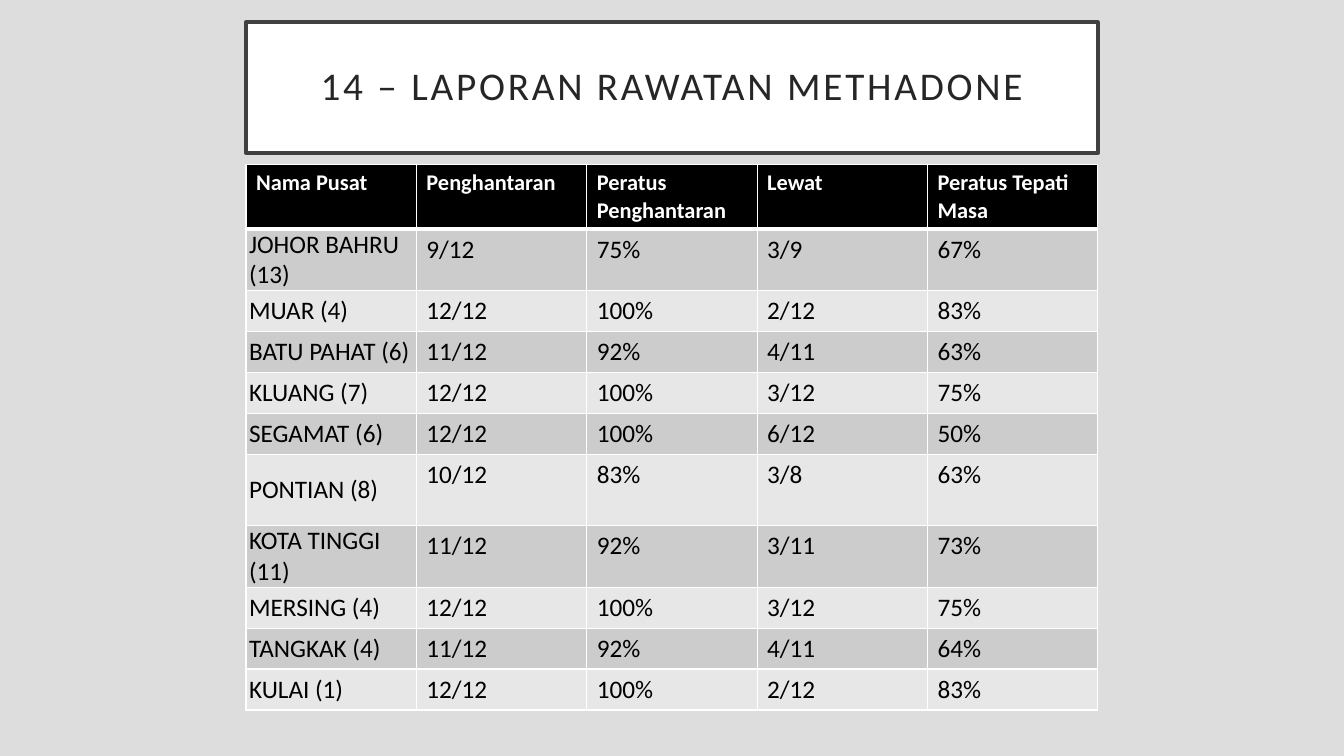
import pptx
import pptx.util
import pptx.dml.color
import pptx.enum.shapes
import pptx.enum.text
import pptx.oxml
import pptx.oxml.ns

Inches = pptx.util.Inches
Pt = pptx.util.Pt

COLOURS = {
    "page": "DDDDDD", "white": "FFFFFF", "frame": "404040", "title": "262626",
    "black": "000000", "odd": "CCCCCC", "even": "E7E7E7",
}
FONT = "Calibri"
TITLE_BOX = (2.44, 0.22, 8.45, 1.3)
TABLE_BOX = (2.44, 1.63, 8.45)
ROW_HEIGHT = 0.4
TALL_ROWS = {0: 0.64, 1: 0.61, 6: 0.71, 7: 0.61}

HEADINGS = ("Nama Pusat", "Penghantaran", "Peratus Penghantaran", "Lewat",
            "Peratus Tepati Masa")
CENTRES = (
    ("JOHOR BAHRU (13)", "9/12", "75%", "3/9", "67%"),
    ("MUAR (4)", "12/12", "100%", "2/12", "83%"),
    ("BATU PAHAT (6)", "11/12", "92%", "4/11", "63%"),
    ("KLUANG (7)", "12/12", "100%", "3/12", "75%"),
    ("SEGAMAT (6)", "12/12", "100%", "6/12", "50%"),
    ("PONTIAN (8)", "10/12", "83%", "3/8", "63%"),
    ("KOTA TINGGI (11)", "11/12", "92%", "3/11", "73%"),
    ("MERSING (4)", "12/12", "100%", "3/12", "75%"),
    ("TANGKAK (4)", "11/12", "92%", "4/11", "64%"),
    ("KULAI (1)", "12/12", "100%", "2/12", "83%"),
)


def colour(name):
    return pptx.dml.color.RGBColor.from_string(COLOURS[name])


def set_all(target, values):
    for name, value in values.items():
        setattr(target, name, value)


def paint(fill, name):
    fill.solid()
    fill.fore_color.rgb = colour(name)


def write(frame, text, colour_name, **font):
    """Put one run into the frame's first paragraph and return both."""
    para = frame.paragraphs[0]
    span = para.add_run()
    span.text = text
    set_all(span.font, {"name": FONT, **font})
    span.font.color.rgb = colour(colour_name)
    return para, span


def add_title(page, box, text):
    panel = page.shapes.add_shape(
        pptx.enum.shapes.MSO_SHAPE.RECTANGLE, *map(Inches, box))
    panel.shadow.inherit = False
    paint(panel.fill, "white")
    paint(panel.line.fill, "frame")
    panel.line.width = Pt(2.5)
    inset = Inches(0.2)
    set_all(panel.text_frame, {
        "word_wrap": True,
        "vertical_anchor": pptx.enum.text.MSO_ANCHOR.MIDDLE,
        "margin_left": inset, "margin_right": inset,
        "margin_top": inset, "margin_bottom": inset,
    })
    para, span = write(panel.text_frame, text, "title", size=Pt(28))
    set_all(para, {"alignment": pptx.enum.text.PP_ALIGN.CENTER, "line_spacing": 0.9})
    span.font._element.set("spc", "200")


def add_borders(cell, bottom, top):
    """Draw white borders; they must come before the fill in the cell's XML."""
    properties = cell._tc.get_or_add_tcPr()
    widths = {"lnL": 1, "lnR": 1, "lnT": top, "lnB": bottom}
    for index, (side, width) in enumerate(widths.items()):
        border = pptx.oxml.parse_xml(
            f'<a:{side} {pptx.oxml.ns.nsdecls("a")} w="{Pt(width)}">'
            f'<a:solidFill><a:srgbClr val="{COLOURS["white"]}"/></a:solidFill>'
            f'</a:{side}>')
        properties.insert(index, border)


def add_report_table(page, box, rows):
    left, top, width = box
    heights = [TALL_ROWS.get(index, ROW_HEIGHT) for index in range(len(rows))]
    table = page.shapes.add_table(
        len(rows), len(HEADINGS), Inches(left), Inches(top),
        Inches(width), Inches(sum(heights))).table
    for column in table.columns:
        column.width = Inches(width / len(HEADINGS))
    for row_index, values in enumerate(rows):
        table.rows[row_index].height = Inches(heights[row_index])
        is_header = row_index == 0
        band = "black" if is_header else "odd" if row_index % 2 else "even"
        for column_index, text in enumerate(values):
            cell = table.cell(row_index, column_index)
            paint(cell.fill, band)
            add_borders(cell, bottom=3 if is_header else 1,
                        top=3 if row_index == 1 else 1)
            write(cell.text_frame, text, "white" if is_header else "black",
                  size=Pt(16 if is_header else 18), bold=is_header)
            if column_index == 0 and not is_header:
                set_all(cell, {
                    "vertical_anchor": pptx.enum.text.MSO_ANCHOR.MIDDLE,
                    "margin_left": Inches(0.03), "margin_right": Inches(0.03),
                    "margin_top": 0, "margin_bottom": 0,
                })


def main():
    deck = pptx.Presentation()
    set_all(deck, {"slide_width": Inches(13.33), "slide_height": Inches(7.5)})
    page = deck.slides.add_slide(deck.slide_layouts[6])
    paint(page.background.fill, "page")
    add_title(page, TITLE_BOX, "14 – LAPORAN RAWATAN METHADONE")
    add_report_table(page, TABLE_BOX, (HEADINGS, *CENTRES))
    deck.save("out.pptx")


if __name__ == "__main__":
    main()
